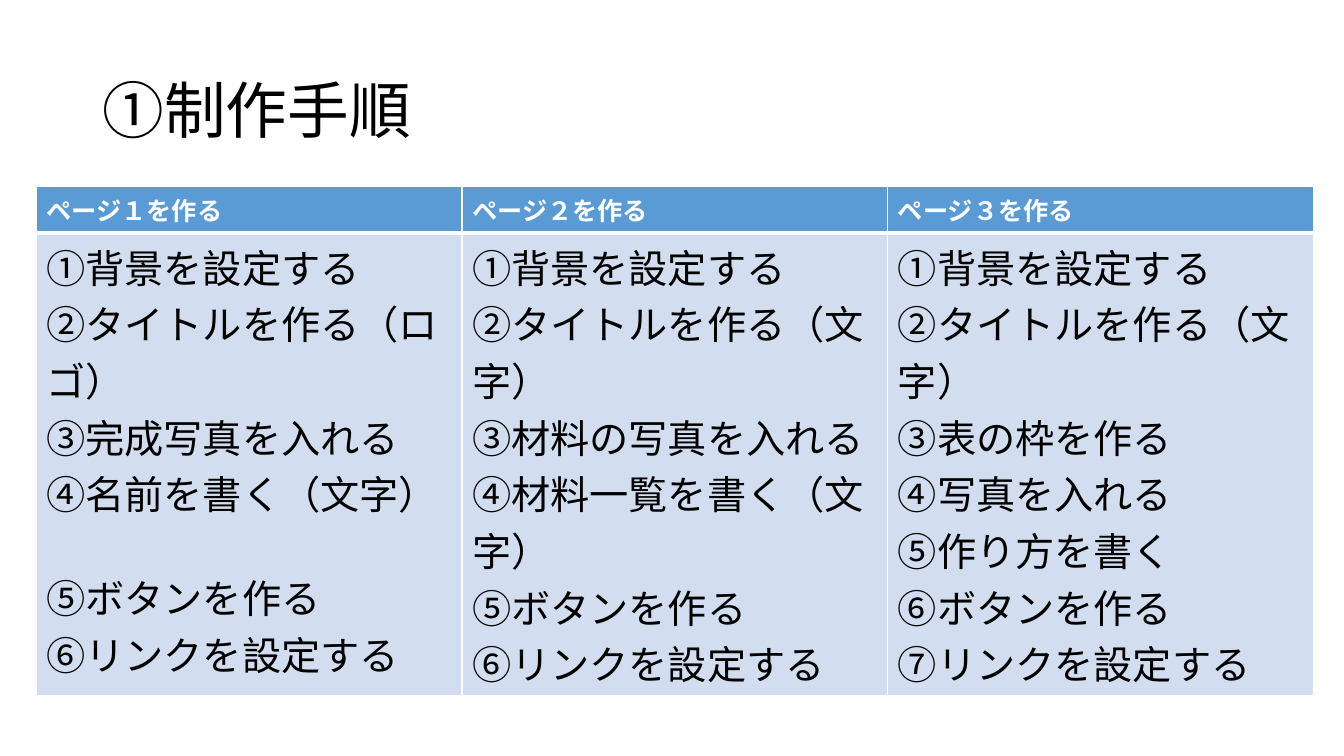
from dataclasses import dataclass

from lxml.etree import SubElement
from pptx import Presentation
from pptx.dml.color import RGBColor
from pptx.enum.text import MSO_ANCHOR
from pptx.oxml.ns import qn
from pptx.util import Inches, Pt


@dataclass
class Theme:
    font: str = "Calibri"
    black: str = "000000"
    white: str = "FFFFFF"
    blue: str = "5B9BD5"
    pale: str = "D2DEEF"
    title: int = 44
    head: int = 18
    body: int = 28


theme = Theme()


def style(par, size, color, bold=False):
    for run in par.runs:
        run.font.name = theme.font
        run.font.size = Pt(size)
        run.font.bold = bold
        run.font.color.rgb = RGBColor.from_string(color)


def border(cell, top, bottom):
    props = cell._tc.get_or_add_tcPr()
    for side, width in (("L", 1), ("R", 1), ("T", top), ("B", bottom)):
        line = SubElement(props, qn(f"a:ln{side}"), w=str(Pt(width)))
        fill = SubElement(line, qn("a:solidFill"))
        SubElement(fill, qn("a:srgbClr"), val=theme.white)


pages = [
    ("ページ１を作る", [
        "①背景を設定する", "②タイトルを作る（ロゴ）", "③完成写真を入れる",
        "④名前を書く（文字）", "⑤ボタンを作る", "⑥リンクを設定する"]),
    ("ページ２を作る", [
        "①背景を設定する", "②タイトルを作る（文字）", "③材料の写真を入れる",
        "④材料一覧を書く（文字）", "⑤ボタンを作る", "⑥リンクを設定する"]),
    ("ページ３を作る", [
        "①背景を設定する", "②タイトルを作る（文字）", "③表の枠を作る",
        "④写真を入れる", "⑤作り方を書く", "⑥ボタンを作る", "⑦リンクを設定する"]),
]

deck = Presentation()
deck.slide_width = Inches(13.33)
deck.slide_height = Inches(7.5)
slide = deck.slides.add_slide(deck.slide_layouts[6])

title = slide.shapes.add_textbox(Inches(0.92), Inches(0.4), Inches(11.5), Inches(1.45))
frame = title.text_frame
frame.word_wrap = True
frame.vertical_anchor = MSO_ANCHOR.MIDDLE
frame.text = "①制作手順"
frame.paragraphs[0].line_spacing = 0.9
style(frame.paragraphs[0], theme.title, theme.black)

table = slide.shapes.add_table(
    2, len(pages), Inches(0.36), Inches(1.85), Inches(12.67), Inches(5.05)).table
table.horz_banding = False
table.rows[0].height = Inches(0.46)
table.rows[1].height = Inches(4.59)

for col, (head, steps) in enumerate(pages):
    rows = [
        (head, theme.blue, theme.head, theme.white, True, 1, 3),
        ("\n".join(steps), theme.pale, theme.body, theme.black, False, 3, 1),
    ]
    for row, (text, fill, size, color, bold, top, bottom) in enumerate(rows):
        cell = table.cell(row, col)
        border(cell, top, bottom)
        cell.fill.solid()
        cell.fill.fore_color.rgb = RGBColor.from_string(fill)
        cell.text_frame.text = text
        for par in cell.text_frame.paragraphs:
            style(par, size, color, bold)

button = table.cell(1, 0).text_frame.paragraphs[4]
button.space_before = Pt(34)

deck.save("out.pptx")
